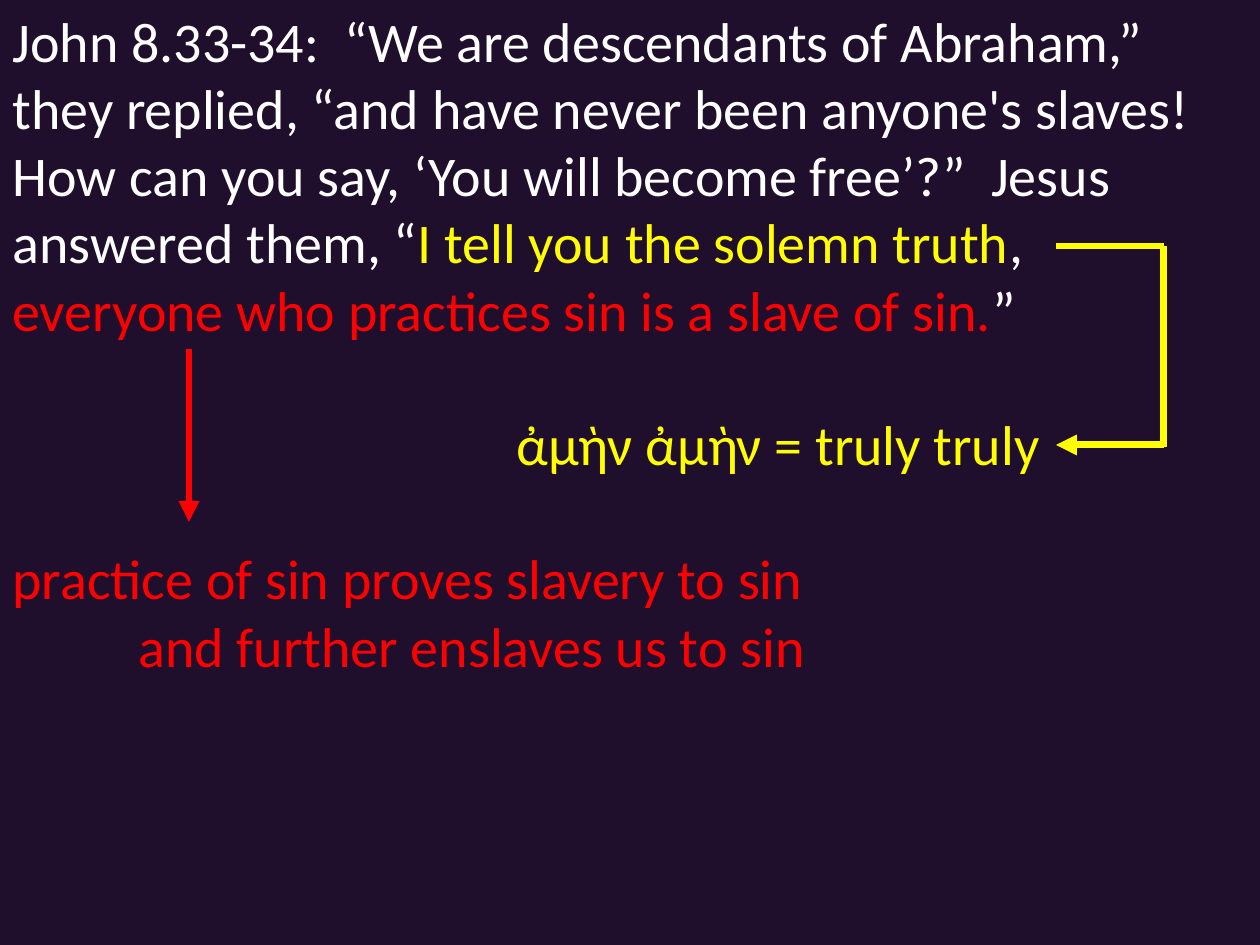
import pptx
import pptx.util
import pptx.dml.color
import pptx.enum.shapes
import pptx.oxml.ns
from lxml import etree

EMU_PER_PX = 914400 / 126
WHITE, YELLOW, RED, NIGHT = "FFFFFF", "FFFF00", "FF0000", "1F0E2C"
LINE_GAP = 38.4  # points, the height of one line of text

# Each paragraph: indent in px, points of space before, coloured spans
PASSAGE = [
    (0, 0, [
        ("John 8.33-34:  “We are descendants of Abraham,” they replied, "
         "“and have never been anyone's slaves! How can you say, "
         "‘You will become free’?”  Jesus answered them, “", WHITE),
        ("I tell you the solemn truth", YELLOW),
        (", ", WHITE),
        ("everyone who practices sin is a slave of sin.", RED),
        ("”", WHITE),
    ]),
    (504, LINE_GAP, [("ἀμὴν ἀμὴν = truly truly", YELLOW)]),
    (0, LINE_GAP, [("practice of sin proves slavery to sin", RED)]),
    (126, 0, [("and further enslaves us to sin", RED)]),
]


def px(length):
    return pptx.util.Emu(round(length * EMU_PER_PX))


def paint(color_format, color):
    color_format.rgb = pptx.dml.color.RGBColor.from_string(color)


def add_line(page, start, end, color, arrow=False):
    line = page.shapes.add_connector(
        pptx.enum.shapes.MSO_CONNECTOR.STRAIGHT,
        *(px(value) for value in (*start, *end)))
    line.line.width = pptx.util.Pt(4)
    line.line.fill.solid()
    paint(line.line.fill.fore_color, color)
    if arrow:
        outline = line.line.fill._xPr
        etree.SubElement(outline, pptx.oxml.ns.qn("a:tailEnd"), type="triangle")
    properties = line._element.spPr
    etree.SubElement(properties, pptx.oxml.ns.qn("a:effectLst"))


def add_passage(page, left, top, width, height):
    box = page.shapes.add_textbox(px(left), px(top), px(width), px(height))
    frame = box.text_frame
    frame.word_wrap = True
    for index, (indent, gap, spans) in enumerate(PASSAGE):
        para = frame.add_paragraph() if index else frame.paragraphs[0]
        para.font.name = "Calibri"
        para.font.size = pptx.util.Pt(32)
        para.space_before = pptx.util.Pt(gap)
        para._p.get_or_add_pPr().set("marL", str(px(indent)))
        for text, color in spans:
            span = para.add_run()
            span.text = text
            paint(span.font.color, color)


def add_bracket(page, left, top, width, height):
    """Link the phrase above to its translation below, round the right side."""
    right, bottom = left + width, top + height
    add_line(page, (right, top), (right, bottom + 2), YELLOW)
    add_line(page, (right, bottom), (left, bottom), YELLOW, arrow=True)
    add_line(page, (left, top), (right, top), YELLOW)


def add_down_arrow(page, left, top, height):
    add_line(page, (left, top), (left, top + height), RED, arrow=True)


def main():
    deck = pptx.Presentation()
    deck.slide_width, deck.slide_height = px(1260), px(945)
    page = deck.slides.add_slide(deck.slide_layouts[6])
    page.background.fill.solid()
    paint(page.background.fill.fore_color, NIGHT)

    # Verse and comments
    add_passage(page, 0, 0, 1260, 692)
    # Links from the verse to the comments
    add_bracket(page, 1056, 246, 108, 199)
    add_down_arrow(page, 189, 349, 173)

    deck.save("out.pptx")


if __name__ == "__main__":
    main()
